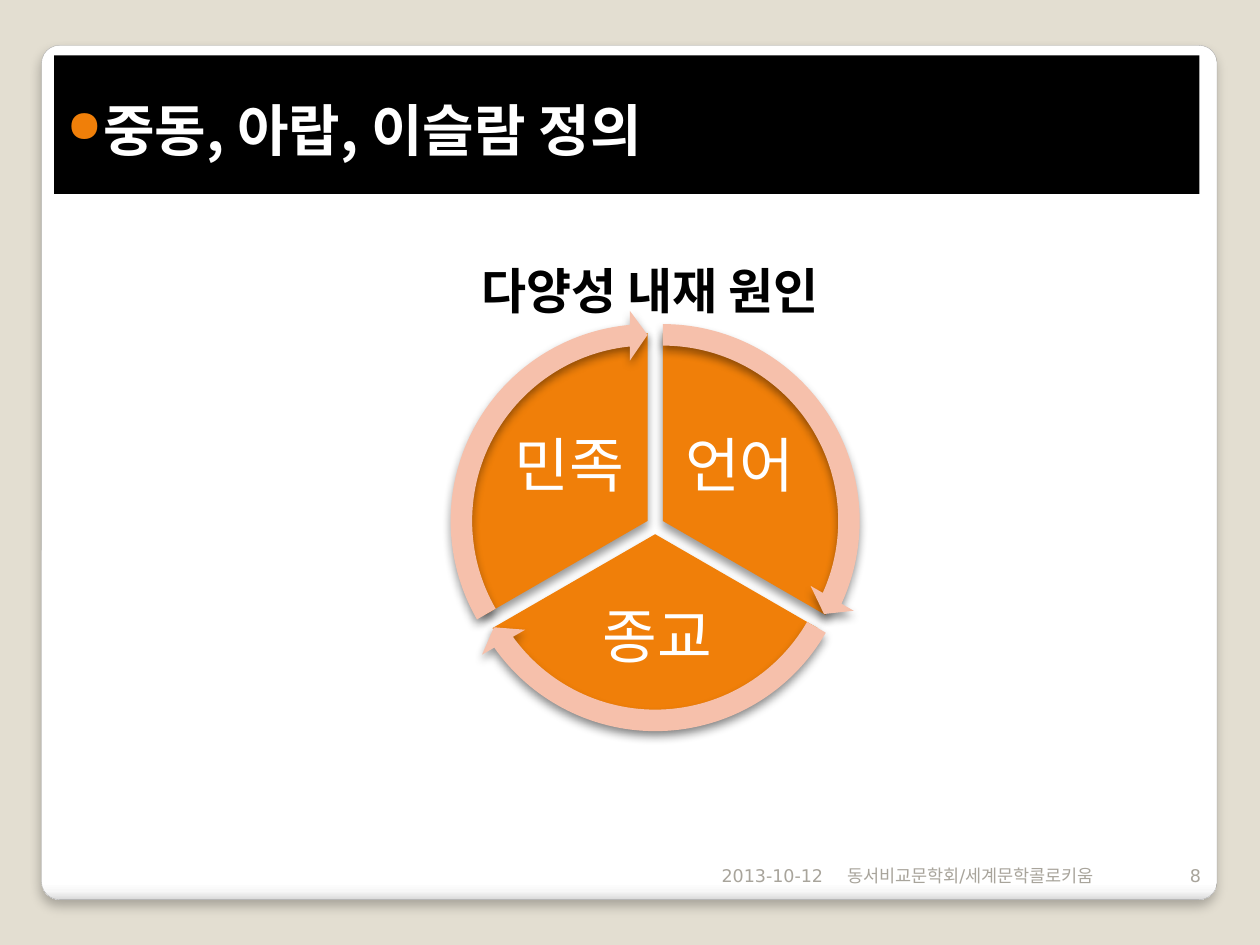
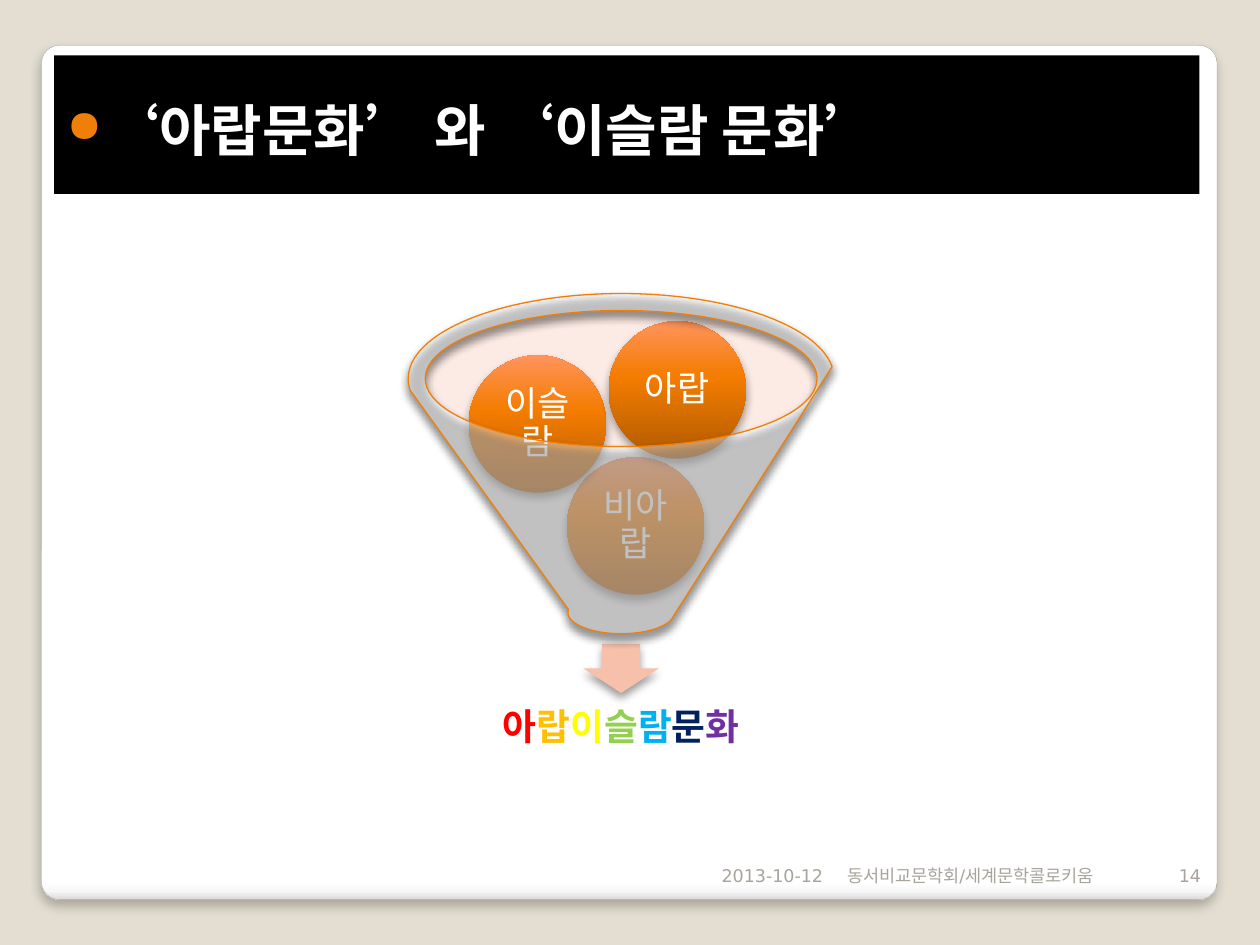
"""Build two slides on the Middle East: a three-part cycle and a funnel."""
from math import cos, radians, sin

from lxml import etree
from pptx import Presentation
from pptx.dml.color import RGBColor
from pptx.enum import shapes, text
from pptx.oxml import ns
from pptx.util import Inches, Pt

KOREAN_FONT = "Noto Sans CJK KR"
PLAIN_FONT = "DejaVu Sans"
BACKGROUND = RGBColor(0xE3, 0xDE, 0xD1)
BLACK = RGBColor(0, 0, 0)
WHITE = RGBColor(0xFF, 0xFF, 0xFF)
ORANGE = RGBColor(0xF0, 0x7F, 0x09)
SALMON = RGBColor(0xF6, 0xC0, 0xAB)
PALE_SALMON = RGBColor(0xF8, 0xCC, 0xBD)
FOOTER_GREY = RGBColor(0xA8, 0xA4, 0x9B)
CARD_LINE = RGBColor(0xA4, 0xA4, 0xA4)
CARD_STOPS = [(0, WHITE), (98, WHITE), (99, RGBColor(0xF7, 0xF7, 0xF7)),
              (100, RGBColor(0xDA, 0xDA, 0xDA))]
BALL_STOPS = [(0, RGBColor(0xB0, 0x5A, 0x00)), (60, RGBColor(0xF4, 0x7C, 0x00)),
              (100, RGBColor(0xFF, 0x94, 0x5C))]

CYCLE_TITLE = "중동, 아랍, 이슬람 정의"
CYCLE_HEADING = "다양성 내재 원인"
CYCLE_PARTS = [
    ("언어", 270, (5.34, 3.27, 1.06, 0.89)),
    ("종교", 30, (4.42, 4.68, 1.59, 0.78)),
    ("민족", 150, (3.99, 3.27, 1.06, 0.89)),
]
FUNNEL_TITLE = "‘아랍문화’ 와 ‘이슬람 문화’"
FUNNEL_BALLS = [("비아랍", 4.5, 3.63), ("이슬람", 3.72, 2.82), ("아랍", 4.83, 2.55)]
FUNNEL_RESULT = [
    ("아", RGBColor(0xFF, 0x00, 0x00)),
    ("랍", RGBColor(0xFF, 0xC0, 0x00)),
    ("이", RGBColor(0xFF, 0xFF, 0x00)),
    ("슬", RGBColor(0x92, 0xD0, 0x50)),
    ("람", RGBColor(0x00, 0xB0, 0xF0)),
    ("문", RGBColor(0x00, 0x20, 0x60)),
    ("화", RGBColor(0x70, 0x30, 0xA0)),
]
FOOTER_DATE = "2013-10-12"
FOOTER_EVENT = "동서비교문학회/세계문학콜로키움"

CYCLE_CENTRE = (5.2, 4.17)
SLICE_GAP = 0.07
SLICE_SIZE = 2.98
ARROW_SIZE = 3.35
ARROW_HEAD = 3.275
ANGLE_UNIT = 0.6
BALL_SIZE = 1.09

LEFT, CENTER, RIGHT = text.PP_ALIGN.LEFT, text.PP_ALIGN.CENTER, text.PP_ALIGN.RIGHT
TOP, MIDDLE, BOTTOM = (text.MSO_ANCHOR.TOP, text.MSO_ANCHOR.MIDDLE,
                       text.MSO_ANCHOR.BOTTOM)
KIND = shapes.MSO_SHAPE


def add_xml(parent, tag, **attributes):
    child = etree.SubElement(parent, ns.qn(tag))
    for name, value in attributes.items():
        child.set(name, str(value))
    return child


def set_alpha(colour_element, percent):
    add_xml(colour_element, "a:alpha", val=percent * 1000)


def write_text(shape, content, *, size, color=WHITE, font=PLAIN_FONT, bold=False,
               align=LEFT, anchor=TOP, inset=None, line_spacing=None, after=None):
    frame = shape.text_frame
    frame.word_wrap = True
    frame.vertical_anchor = anchor
    if inset is not None:
        frame.margin_left = frame.margin_right = Inches(inset)
        frame.margin_top = frame.margin_bottom = Inches(inset)
    paragraph = frame.paragraphs[0]
    paragraph.alignment = align
    if line_spacing:
        paragraph.line_spacing = line_spacing
    if after:
        paragraph.space_after = Pt(after)
    runs = [(content, color)] if isinstance(content, str) else content
    for words, run_color in runs:
        run = paragraph.add_run()
        run.text = words
        run.font.size = Pt(size)
        run.font.bold = bold
        run.font.color.rgb = run_color
        run.font.name = font
        add_xml(run.font._element, "a:ea", typeface=font)
    return paragraph


def add_label(slide, box, content, **text_format):
    label = slide.shapes.add_textbox(*map(Inches, box))
    write_text(label, content, **text_format)


def write_diagram_text(shape, content, size, inset, **text_format):
    write_text(shape, content, size=size, inset=inset, align=CENTER, anchor=MIDDLE,
               line_spacing=0.9, after=0.35 * size, **text_format)


def fill_gradient(shape, stops, angle):
    shape.fill.gradient()
    shape.fill.gradient_angle = 360 - angle
    stop_list = shape.element.spPr.find(".//" + ns.qn("a:gsLst"))
    for stop in list(stop_list):
        stop_list.remove(stop)
    for position, color in stops:
        stop = add_xml(stop_list, "a:gs", pos=position * 1000)
        add_xml(stop, "a:srgbClr", val=color)


def add_figure(slide, kind, box, *, fill=None, alpha=None, stops=None, angle=90,
               line=None, line_width=0.75, shadow=(40, 5.2, 3), adjustments=()):
    shape = slide.shapes.add_shape(kind, *map(Inches, box))
    for index, value in enumerate(adjustments):
        shape.adjustments[index] = value
    if stops:
        fill_gradient(shape, stops, angle)
    else:
        shape.fill.solid()
        shape.fill.fore_color.rgb = fill
    if alpha:
        set_alpha(shape.element.spPr.find(".//" + ns.qn("a:srgbClr")), alpha)
    if line is None:
        shape.line.fill.background()
    else:
        shape.line.color.rgb = line
        shape.line.width = Pt(line_width)
    shape.shadow.inherit = False
    if shadow:
        opacity, blur, distance = shadow
        effects = shape.element.spPr.find(ns.qn("a:effectLst"))
        outer = add_xml(effects, "a:outerShdw", blurRad=Pt(blur), dist=Pt(distance),
                        dir=5400000, algn="t", rotWithShape=0)
        set_alpha(add_xml(outer, "a:srgbClr", val=BLACK), opacity)
    return shape


def add_title(slide, title):
    band = add_figure(slide, KIND.RECTANGLE, (0.43, 0.44, 9.09, 1.1), fill=BLACK,
                      shadow=None)
    paragraph = write_text(band, title, size=32, font=KOREAN_FONT, bold=True,
                           line_spacing=1.5)
    paragraph.space_before = Pt(2.5)
    properties = paragraph._p.get_or_add_pPr()
    properties.set("marL", str(Inches(0.29)))
    properties.set("indent", str(-Inches(0.29)))
    add_xml(add_xml(properties, "a:buClr"), "a:srgbClr", val=ORANGE)
    add_xml(properties, "a:buSzPct", val=80000)
    add_xml(properties, "a:buChar", char="●")


def add_base_slide(presentation, title, number):
    slide = presentation.slides.add_slide(presentation.slide_layouts[6])
    slide.background.fill.solid()
    slide.background.fill.fore_color.rgb = BACKGROUND
    add_figure(slide, KIND.ROUNDED_RECTANGLE, (0.33, 0.36, 9.33, 6.78),
               stops=CARD_STOPS, line=CARD_LINE, line_width=0.16,
               shadow=(25, 6, 4), adjustments=[0.021])
    add_title(slide, title)
    for content, left, width, align in [(FOOTER_DATE, 4.13, 2.5, RIGHT),
                                        (FOOTER_EVENT, 6.63, 2.5, LEFT),
                                        (str(number), 9.13, 0.5, RIGHT)]:
        add_label(slide, (left, 6.68, width, 0.4), content, size=10,
                  color=FOOTER_GREY, align=align, anchor=BOTTOM)
    return slide


def square_around(centre, size):
    return centre[0] - size / 2, centre[1] - size / 2, size, size


def add_cycle(slide):
    arrows = []
    for name, start, label_box in CYCLE_PARTS:
        end = (start + 120) % 360
        direction = radians(start + 60)
        centre = (CYCLE_CENTRE[0] + SLICE_GAP * cos(direction),
                  CYCLE_CENTRE[1] + SLICE_GAP * sin(direction))
        first, last = start * ANGLE_UNIT, end * ANGLE_UNIT
        add_figure(slide, KIND.PIE, square_around(centre, SLICE_SIZE), fill=ORANGE,
                   adjustments=[first, last])
        label = slide.shapes.add_textbox(*map(Inches, label_box))
        write_diagram_text(label, name, 34, 0.05)
        arrows.append((centre, first, last))
    for centre, first, last in arrows:
        add_figure(slide, KIND.CIRCULAR_ARROW, square_around(centre, ARROW_SIZE),
                   fill=SALMON, adjustments=[0.051, ARROW_HEAD, last - ARROW_HEAD,
                                             first, 0.059])
    add_label(slide, (3.19, 2.02, 3.94, 0.57), CYCLE_HEADING, size=28, color=BLACK,
              font=KOREAN_FONT, bold=True, align=CENTER)


def add_funnel(slide):
    add_figure(slide, KIND.OVAL, (3.37, 2.47, 3.11, 1.08), fill=PALE_SALMON, alpha=40,
               shadow=None)
    add_figure(slide, KIND.DOWN_ARROW, (4.63, 5.11, 0.6, 0.39), fill=SALMON)
    result = slide.shapes.add_textbox(*map(Inches, (3.48, 5.42, 2.9, 0.72)))
    write_diagram_text(result, FUNNEL_RESULT, 21, 0.16, font=KOREAN_FONT, bold=True)
    for name, left, top in FUNNEL_BALLS:
        ball = add_figure(slide, KIND.OVAL, (left, top, BALL_SIZE, BALL_SIZE),
                          stops=BALL_STOPS, angle=270)
        write_diagram_text(ball, name, 20, 0.03, font=KOREAN_FONT)
    add_figure(slide, KIND.FUNNEL, (3.24, 2.33, 3.38, 2.7), fill=WHITE, alpha=40,
               line=ORANGE)


def main():
    presentation = Presentation()
    presentation.slide_width = Inches(10)
    presentation.slide_height = Inches(7.5)
    add_cycle(add_base_slide(presentation, CYCLE_TITLE, 8))
    add_funnel(add_base_slide(presentation, FUNNEL_TITLE, 14))
    presentation.save("out.pptx")


if __name__ == "__main__":
    main()
